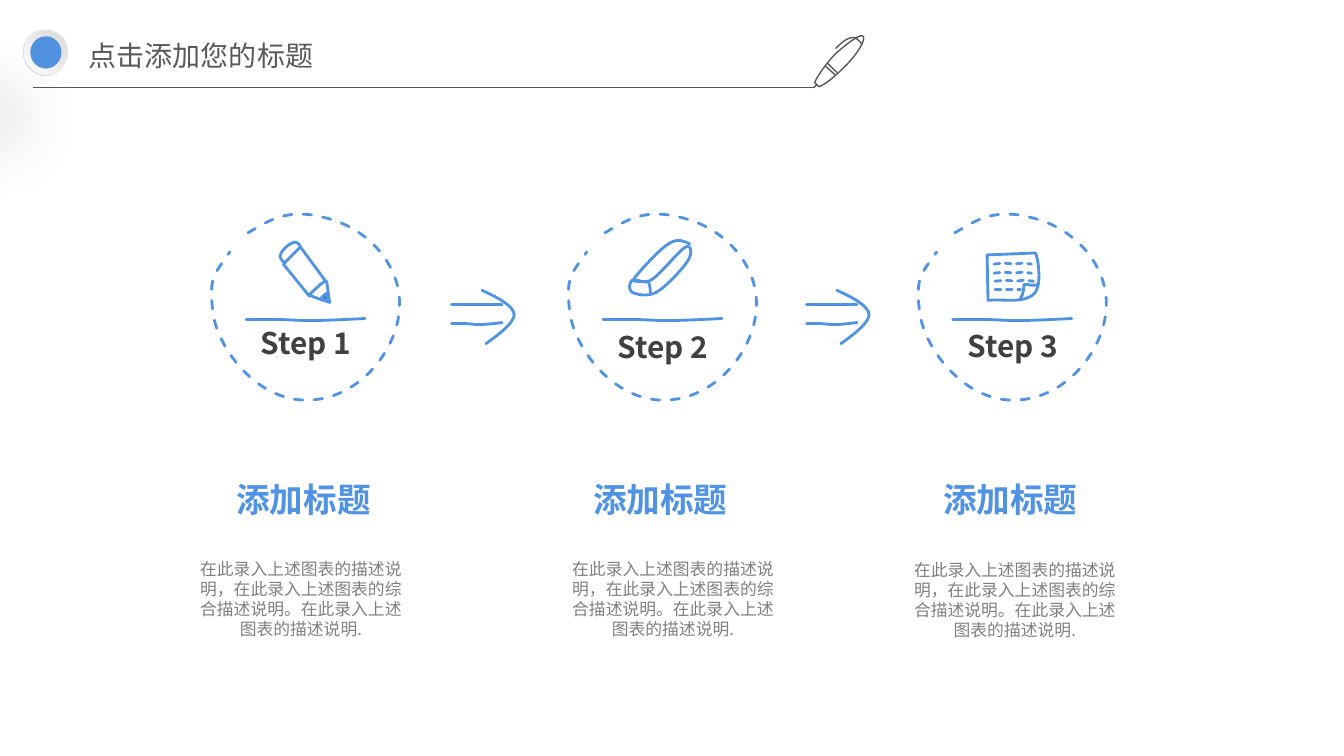
from lxml import etree
from pptx import Presentation
from pptx.dml.color import RGBColor
from pptx.enum.dml import MSO_LINE
from pptx.enum.shapes import MSO_CONNECTOR, MSO_SHAPE
from pptx.enum.text import MSO_ANCHOR, MSO_AUTO_SIZE, PP_ALIGN
from pptx.oxml import parse_xml
from pptx.oxml.ns import nsdecls, qn
from pptx.util import Inches, Pt

BLUE = RGBColor(0x50, 0x93, 0xE2)
BUTTON_BLUE = RGBColor(0x50, 0x92, 0xE0)
TIP_BLUE = RGBColor(0x16, 0x48, 0x83)
DARK = RGBColor(0x40, 0x40, 0x40)
INK = RGBColor(0x59, 0x59, 0x59)
GRAY = RGBColor(0x80, 0x80, 0x80)
FONT_JP = "Noto Sans CJK JP"
FONT_SC = "Noto Sans CJK SC"

TITLE = "点击添加您的标题"
HEADING = "添加标题"
BODY = "在此录入上述图表的描述说明，在此录入上述图表的综合描述说明。在此录入上述图表的描述说明."
STEPS = [
    {"label": "Step 1", "shift": 0, "label_top": 3.16, "body_at": (1.86, 5.49)},
    {"label": "Step 2", "shift": 3.54, "label_top": 3.2, "body_at": (5.55, 5.49)},
    {"label": "Step 3", "shift": 7.01, "label_top": 3.19, "body_at": (8.94, 5.5)},
]
ARROW_SHIFTS = [0, 3.52]

RING = ("M 2.46 2.31 C 2.67 2.19 2.85 2.05 3.26 2.17 C 3.67 2.28 4 2.66 3.96 3.08 "
        "C 3.93 3.49 3.55 3.97 3.04 3.97 C 2.52 3.97 2.14 3.42 2.11 3.08 "
        "C 2.07 2.74 2.13 2.72 2.28 2.5")
UNDERLINE = "M 2.44 3.17 L 2.75 3.17 C 2.86 3.17 2.93 3.18 3.08 3.18 C 3.22 3.18 3.42 3.17 3.62 3.16"
ARROW = [
    "M 4.48 3.02 L 4.98 3.02",
    "M 4.48 3.21 L 4.61 3.21 C 4.66 3.21 4.69 3.22 4.75 3.22 C 4.81 3.22 4.9 3.21 4.98 3.2",
    "M 4.78 2.88 C 4.93 2.95 5.09 3.03 5.1 3.12 C 5.1 3.2 4.96 3.31 4.82 3.41",
]
PENCIL = [
    "M 3.27 3 C 3.18 2.97 3.08 2.94 3.07 2.92 C 3.13 2.87 3.21 2.78 3.24 2.79 L 3.27 3 Z",
    "M 3.23 2.79 L 2.98 2.45 L 2.81 2.62 L 3.07 2.94",
    "M 2.83 2.61 C 2.8 2.59 2.77 2.56 2.78 2.53 C 2.79 2.49 2.86 2.42 2.9 2.41 "
    "C 2.93 2.39 2.97 2.41 2.98 2.45",
]
PENCIL_TIP = "M 3.25 2.98 C 3.22 2.97 3.19 2.96 3.19 2.95 C 3.21 2.94 3.23 2.91 3.24 2.91 L 3.25 2.98 Z"
ERASER = [
    "M 6.27 2.78 C 6.24 2.8 6.23 2.88 6.27 2.9 C 6.31 2.92 6.42 2.95 6.51 2.9 "
    "C 6.6 2.85 6.77 2.67 6.82 2.59 C 6.87 2.52 6.86 2.42 6.8 2.45 "
    "C 6.74 2.48 6.56 2.71 6.47 2.77 C 6.39 2.83 6.31 2.76 6.27 2.78 Z",
    "M 6.45 2.91 C 6.45 2.85 6.44 2.81 6.43 2.8 C 6.43 2.79 6.27 2.8 6.28 2.78 "
    "C 6.28 2.76 6.54 2.47 6.63 2.42 C 6.72 2.36 6.78 2.39 6.84 2.42",
]
NOTE = [
    "M 9.79 2.53 L 9.8 2.98 C 9.91 2.97 10.06 2.99 10.14 2.97 C 10.22 2.95 10.27 2.93 10.29 2.85 "
    "C 10.32 2.78 10.3 2.57 10.27 2.51 L 9.79 2.53 Z",
    "M 10.12 2.96 C 10.14 2.93 10.15 2.9 10.15 2.88 C 10.16 2.86 10.15 2.82 10.16 2.82 "
    "C 10.18 2.82 10.22 2.83 10.24 2.83 C 10.26 2.83 10.28 2.83 10.3 2.82",
]
NOTE_ROWS = [
    "M 9.86 2.62 L 9.96 2.61 L 10.06 2.62 L 10.14 2.61 L 10.23 2.62",
    "M 9.86 2.71 L 9.96 2.7 L 10.06 2.71 L 10.14 2.7 L 10.23 2.71",
    "M 9.87 2.79 L 9.97 2.78 L 10.08 2.79 L 10.15 2.78 L 10.25 2.79",
    "M 9.87 2.87 L 10.12 2.87",
]
PEN = ("M 8.28 0.74 L 8.19 0.66 M 8.21 0.63 L 8.3 0.72 "
       "M 8.56 0.36 C 8.54 0.33 8.41 0.42 8.27 0.55 C 8.17 0.66 8.1 0.77 8.08 0.82 L 8.12 0.86 "
       "C 8.17 0.85 8.27 0.77 8.38 0.66 C 8.51 0.53 8.59 0.39 8.56 0.36 "
       "M 8.1 0.84 L 8.07 0.87 "
       "M 8.55 0.44 C 8.55 0.44 8.52 0.4 8.49 0.38 C 8.49 0.38 8.43 0.33 8.29 0.48")
BUTTON_RINGS = [
    ((0.23, 0.29, 0.44, 0.46), "FFFFFF", "D9D9D9"),
    ((0.24, 0.3, 0.43, 0.44), "D9D9D9", "FEFEFE"),
]
COMMANDS = {"M": ("a:moveTo", 1), "L": ("a:lnTo", 1), "C": ("a:cubicBezTo", 3)}
SAMPLES = 20


def bezier(points, t):
    weights = ((1 - t) ** 3, 3 * t * (1 - t) ** 2, 3 * t * t * (1 - t), t ** 3)
    return tuple(sum(w * p[axis] for w, p in zip(weights, points)) for axis in (0, 1))


def read_outline(outline, shift):
    tokens = iter(outline.replace("Z", "").split())
    segments = []
    for command in tokens:
        tag, count = COMMANDS[command]
        points = [(Inches(float(next(tokens)) + shift), Inches(float(next(tokens))))
                  for _ in range(count)]
        segments.append((tag, points))
    return segments


def find_bounds(segments):
    reached = []
    for tag, points in segments:
        if len(points) == 3:
            curve = [reached[-1]] + points
            reached += [bezier(curve, i / SAMPLES) for i in range(1, SAMPLES)]
        reached.append(points[-1])
    across, down = zip(*reached)
    left, top = int(min(across)), int(min(down))
    return left, top, int(max(across)) - left, int(max(down)) - top


def bend(shape, segments, closed):
    left, top, width, height = find_bounds(segments)
    shape.left, shape.top, shape.width, shape.height = left, top, width, height
    track = next(shape.element.spPr.iter(qn("a:path")))
    for child in list(track):
        track.remove(child)
    track.set("w", str(width))
    track.set("h", str(height))
    for tag, points in segments:
        segment = etree.SubElement(track, qn(tag))
        for x, y in points:
            etree.SubElement(segment, qn("a:pt"), x=str(x - left), y=str(y - top))
    if closed:
        etree.SubElement(track, qn("a:close"))


def draw(page, outline, shift=0, color=BLUE, width=2, dash=None, fill=None):
    segments = read_outline(outline, shift)
    corners = [points[-1] for tag, points in segments]
    builder = page.shapes.build_freeform(*corners[0], scale=1.0)
    builder.add_line_segments(corners[1:], close=False)
    shape = builder.convert_to_shape()
    bend(shape, segments, outline.endswith("Z"))
    shape.shadow.inherit = False
    if fill is None:
        shape.fill.background()
    else:
        shape.fill.solid()
        shape.fill.fore_color.rgb = fill
    shape.line.color.rgb = color
    shape.line.width = Pt(width)
    if dash is not None:
        shape.line.dash_style = dash
    line = shape.element.spPr.find(qn("a:ln"))
    line.set("cap", "rnd")
    etree.SubElement(line, qn("a:round"))


def write(box, text, size, font, color, bold=False, align=PP_ALIGN.CENTER, spacing=1.25):
    frame = box.text_frame
    frame.word_wrap = True
    frame.auto_size = MSO_AUTO_SIZE.NONE
    frame.vertical_anchor = MSO_ANCHOR.TOP
    frame.text = text
    para = frame.paragraphs[0]
    para.alignment = align
    para.line_spacing = Pt(round(size * spacing, 1))
    para.font.size = Pt(size)
    para.font.bold = bold
    para.font.color.rgb = color
    para.font.name = font
    latin = para._p.pPr.find(qn("a:defRPr")).find(qn("a:latin"))
    latin.addnext(parse_xml(f'<a:ea {nsdecls("a")} typeface="{font}"/>'))


def add_text(page, at, *args, **options):
    write(page.shapes.add_textbox(*map(Inches, at)), *args, **options)


def add_disc(page, at):
    disc = page.shapes.add_shape(MSO_SHAPE.OVAL, *map(Inches, at))
    disc.shadow.inherit = False
    disc.line.fill.background()
    return disc


def add_button(page):
    for number, (at, first, last) in enumerate(BUTTON_RINGS):
        disc = add_disc(page, at)
        properties = disc.element.spPr
        properties.find(qn("a:prstGeom")).addnext(parse_xml(
            f'<a:gradFill {nsdecls("a")} rotWithShape="1"><a:gsLst>'
            f'<a:gs pos="0"><a:srgbClr val="{first}"/></a:gs>'
            f'<a:gs pos="100000"><a:srgbClr val="{last}"/></a:gs></a:gsLst>'
            '<a:path path="circle"><a:fillToRect l="100000" b="100000"/></a:path></a:gradFill>'))
        if number == 0:
            properties.find(qn("a:effectLst")).append(parse_xml(
                f'<a:outerShdw {nsdecls("a")} blurRad="{Pt(50)}" dist="{Pt(60)}" dir="7800000" '
                'algn="ctr" rotWithShape="0"><a:srgbClr val="000000"><a:alpha val="25000"/>'
                '</a:srgbClr></a:outerShdw>'))
    center = add_disc(page, (0.3, 0.36, 0.31, 0.32))
    center.fill.solid()
    center.fill.fore_color.rgb = BUTTON_BLUE


def add_header(page):
    rule = page.shapes.add_connector(
        MSO_CONNECTOR.STRAIGHT, Inches(0.33), Inches(0.87), Inches(8.07), Inches(0.87))
    rule.line.color.rgb = INK
    rule.line.width = Pt(0.5)
    etree.SubElement(rule._element.spPr, qn("a:effectLst"))
    draw(page, PEN, color=INK, width=1)
    title = page.shapes.title
    title.left, title.top, title.width, title.height = map(Inches, (0.75, 0.3, 2.65, 0.47))
    frame = title.text_frame
    frame.margin_left = frame.margin_right = Inches(0.13)
    frame.margin_top = frame.margin_bottom = Inches(0.07)
    write(title, TITLE, 20, FONT_JP, INK, align=PP_ALIGN.LEFT)
    add_button(page)


deck = Presentation()
deck.slide_width, deck.slide_height = Inches(13.33), Inches(7.5)
page = deck.slides.add_slide(deck.slide_layouts[5])
for step in STEPS:
    shift = step["shift"]
    draw(page, RING, shift, dash=MSO_LINE.DASH)
    draw(page, UNDERLINE, shift)
    add_text(page, (2.28 + shift, step["label_top"], 1.51, 0.46),
             step["label"], 21.3, FONT_JP, DARK, bold=True)
    add_text(page, (2.01 + shift, 4.69, 2, 0.5), HEADING, 24, FONT_SC, BLUE, bold=True)
    add_text(page, (*step["body_at"], 2.25, 0.9), BODY, 12, FONT_SC, GRAY, spacing=1.2)
for outline in PENCIL + ERASER + NOTE:
    draw(page, outline)
draw(page, PENCIL_TIP, fill=TIP_BLUE)
for row in NOTE_ROWS:
    draw(page, row, dash=MSO_LINE.SQUARE_DOT)
for shift in ARROW_SHIFTS:
    for outline in ARROW:
        draw(page, outline, shift)
add_header(page)
deck.save("out.pptx")
